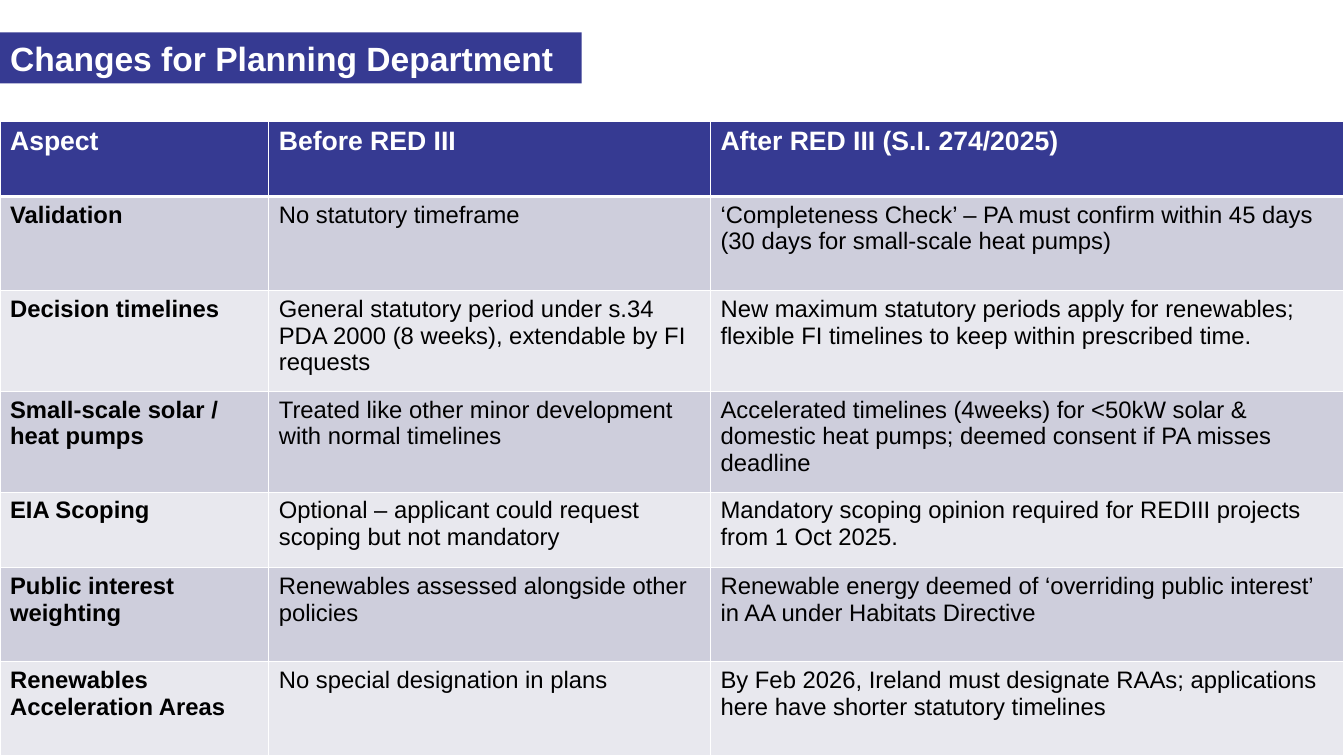
from lxml import etree
from pptx import Presentation
from pptx.dml.color import RGBColor
from pptx.enum import text
from pptx.oxml import ns
from pptx.util import Pt

COLORS = {"navy": "363A92", "dark_band": "CECEDC", "light_band": "E8E8EE",
          "white": "FFFFFF", "black": "000000"}
COLUMN_WIDTHS = [192, 315.5, 452.5]
ROW_HEIGHTS = [54, 67.2, 72, 72, 54, 67.2, 67.2]
ROWS = [
    ("Aspect", "Before RED III", "After RED III (S.I. 274/2025)"),
    ("Validation", "No statutory timeframe",
     "‘Completeness Check’ – PA must confirm within 45 days "
     "(30 days for small-scale heat pumps)"),
    ("Decision timelines",
     "General statutory period under s.34 PDA 2000 (8 weeks), extendable by FI requests",
     "New maximum statutory periods apply for renewables; "
     "flexible FI timelines to keep within prescribed time."),
    ("Small-scale solar / heat pumps",
     "Treated like other minor development with normal timelines",
     "Accelerated timelines (4weeks) for <50kW solar & domestic heat pumps; "
     "deemed consent if PA misses deadline"),
    ("EIA Scoping", "Optional – applicant could request scoping but not mandatory",
     "Mandatory scoping opinion required for REDIII projects from 1 Oct 2025."),
    ("Public interest weighting", "Renewables assessed alongside other policies",
     "Renewable energy deemed of ‘overriding public interest’ "
     "in AA under Habitats Directive"),
    ("Renewables Acceleration Areas", "No special designation in plans",
     "By Feb 2026, Ireland must designate RAAs; "
     "applications here have shorter statutory timelines"),
]


def set_attrs(obj, values):
    for name, value in values.items():
        setattr(obj, name, value)


def paint(fill, color):
    fill.solid()
    fill.fore_color.rgb = RGBColor.from_string(COLORS[color])


def write(tf, content, size, color, bold):
    p = tf.paragraphs[0]
    p.alignment = text.PP_ALIGN.LEFT
    r = p.add_run()
    r.text = content
    set_attrs(r.font, {"name": "Arial", "size": Pt(size), "bold": bold})
    r.font.color.rgb = RGBColor.from_string(COLORS[color])


def add_borders(cell, widths):
    tc_pr = cell._tc.get_or_add_tcPr()
    for side, width in widths.items():
        ln = etree.SubElement(tc_pr, ns.qn(f"a:ln{side}"), w=str(Pt(width)))
        fill = etree.SubElement(ln, ns.qn("a:solidFill"))
        etree.SubElement(fill, ns.qn("a:srgbClr"), val=COLORS["white"])


def add_title(s, content):
    sp = s.shapes.title
    set_attrs(sp, {"left": Pt(0), "top": Pt(23.2), "width": Pt(415.5), "height": Pt(36.3)})
    paint(sp.fill, "navy")
    tf = sp.text_frame
    set_attrs(tf, {"word_wrap": True, "auto_size": text.MSO_AUTO_SIZE.NONE,
                   "vertical_anchor": text.MSO_ANCHOR.MIDDLE})
    write(tf, content, 24, "white", True)


def add_comparison(s):
    table = s.shapes.add_table(len(ROWS), len(COLUMN_WIDTHS), Pt(0), Pt(86.4),
                               Pt(sum(COLUMN_WIDTHS)), Pt(sum(ROW_HEIGHTS))).table
    for column, width in zip(table.columns, COLUMN_WIDTHS):
        column.width = Pt(width)
    for i, (row, height) in enumerate(zip(table.rows, ROW_HEIGHTS)):
        row.height = Pt(height)
        header = i == 0
        band = "navy" if header else "dark_band" if i % 2 else "light_band"
        borders = {"L": 1, "R": 1, "T": 3 if i == 1 else 1, "B": 3 if header else 1}
        for j, cell in enumerate(row.cells):
            write(cell.text_frame, ROWS[i][j], 19 if header else 17,
                  "white" if header else "black", header or j == 0)
            add_borders(cell, borders)
            paint(cell.fill, band)


def main():
    prs = Presentation()
    set_attrs(prs, {"slide_width": Pt(960), "slide_height": Pt(540)})
    s = prs.slides.add_slide(prs.slide_layouts[5])
    add_comparison(s)
    add_title(s, "Changes for Planning Department")
    prs.save("out.pptx")


if __name__ == "__main__":
    main()
